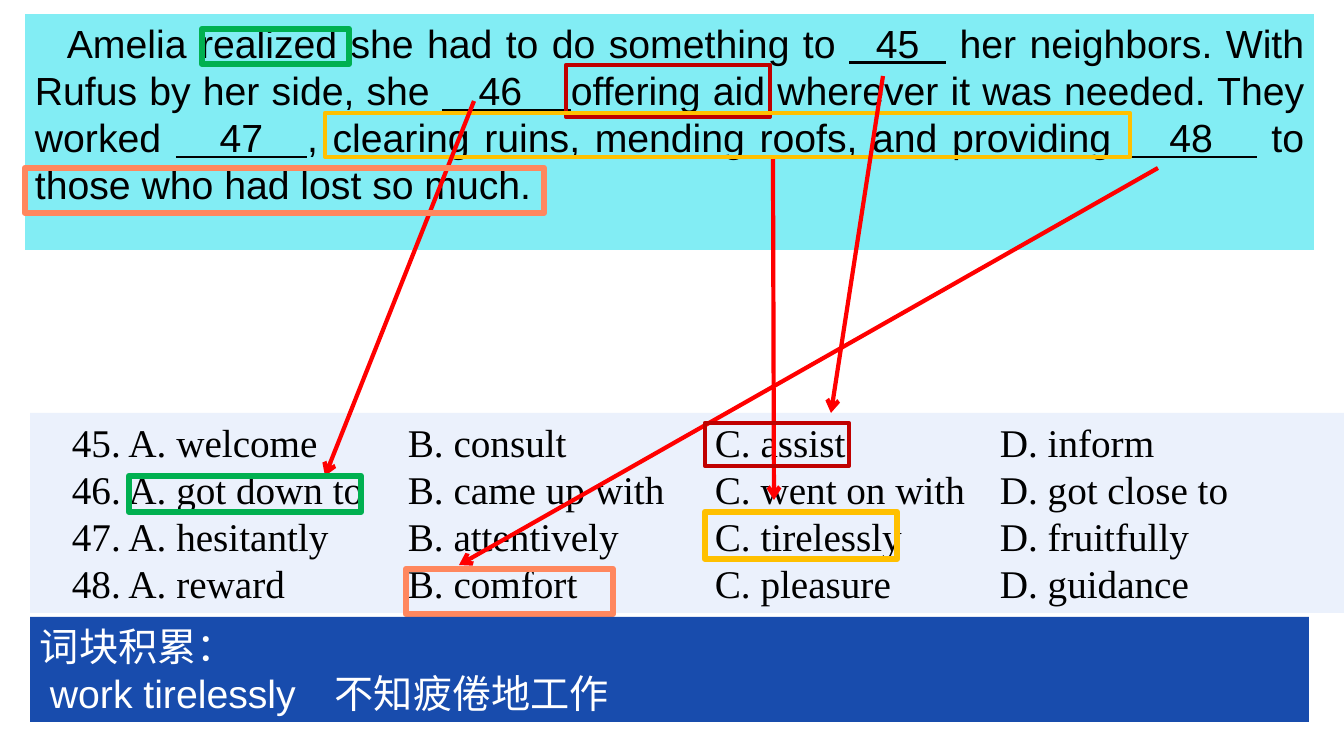
from dataclasses import dataclass

from lxml import etree
from pptx import Presentation
from pptx.dml.color import RGBColor
from pptx.enum.shapes import MSO_CONNECTOR, MSO_SHAPE
from pptx.enum.text import MSO_ANCHOR, PP_ALIGN
from pptx.oxml.ns import qn
from pptx.util import Emu, Pt

RECT = MSO_SHAPE.RECTANGLE
STRAIGHT = MSO_CONNECTOR.STRAIGHT
TOP = MSO_ANCHOR.TOP
LEFT = PP_ALIGN.LEFT
JUSTIFY = PP_ALIGN.JUSTIFY

SCALE = 12192000 / 1344
SIZE = Pt(28)
PITCH = Pt(33.7)
BLACK, WHITE = "000000", "FFFFFF"
RED, CRIMSON, GREEN = "FF0000", "C00000", "00B050"
GOLD, CORAL = "FFC000", "FF875E"
SANS, SERIF = "Arial", "Times New Roman"


@dataclass
class Line:
    runs: list[str]
    indent: int = 0


@dataclass
class Panel:
    box: tuple[int, int, int, int]
    fill: str | None
    ink: str
    font: str
    lines: list[Line]
    align: PP_ALIGN = LEFT


@dataclass
class Frame:
    box: tuple[int, int, int, int]
    color: str
    width: float


@dataclass
class Arrow:
    start: tuple[int, int]
    end: tuple[int, int]


def px(n: int) -> Emu:
    return Emu(round(n * SCALE))


def rgb(code: str) -> RGBColor:
    return RGBColor.from_string(code)


def draw_panel(shapes, panel: Panel) -> None:
    box = shapes.add_textbox(*map(px, panel.box))
    if panel.fill:
        box.fill.solid()
        box.fill.fore_color.rgb = rgb(panel.fill)
    frame = box.text_frame
    frame.word_wrap = True
    frame.vertical_anchor = TOP
    for i, line in enumerate(panel.lines):
        para = frame.add_paragraph() if i else frame.paragraphs[0]
        para.alignment = panel.align
        para.line_spacing = PITCH
        props = para._p.get_or_add_pPr()
        props.set("marL", "0")
        props.set("indent", str(px(line.indent)))
        para.font.name = panel.font
        para.font.size = SIZE
        para.font.color.rgb = rgb(panel.ink)
        for j, text in enumerate(line.runs):
            run = para.add_run()
            run.text = text
            if j % 2:
                run.font.underline = True


def draw_frame(shapes, frame: Frame) -> None:
    rect = shapes.add_shape(RECT, *map(px, frame.box))
    rect.shadow.inherit = False
    rect.fill.background()
    rect.line.color.rgb = rgb(frame.color)
    rect.line.width = Pt(frame.width)


def draw_arrow(shapes, arrow: Arrow) -> None:
    link = shapes.add_connector(STRAIGHT, *map(px, arrow.start + arrow.end))
    link.line.color.rgb = rgb(RED)
    link.line.width = Pt(3)
    etree.SubElement(link.line._get_or_add_ln(), qn("a:tailEnd"), type="arrow")
    etree.SubElement(link._element.spPr, qn("a:effectLst"))


PASSAGE = [
    "Amelia realized she had to do something to ", "  45  ",
    " her neighbors. With Rufus by her side, she ", "   46    ",
    "offering aid wherever it was needed. They worked ", "   47   ",
    ", clearing ruins, mending roofs, and providing ", "   48   ",
    " to those who had lost so much.",
]
FIRST = ["welcome", "got down to", "hesitantly", "reward"]
OTHERS = [
    ("B", 398, 300, ["consult", "came up with", "attentively", "comfort"]),
    ("C", 705, 280, ["assist", "went on with", "tirelessly", "pleasure"]),
    ("D", 990, 280, ["inform", "got close to", "fruitfully", "guidance"]),
]

ITEMS = [
    Panel((25, 14, 1289, 236), "82EDF4", BLACK, SANS, [Line(PASSAGE, 32)], JUSTIFY),
    Panel((30, 413, 1314, 200), "EBF1FC", BLACK, SERIF,
          [Line([f"{num}. A. {word}"], 32) for num, word in enumerate(FIRST, 45)]),
    *(Panel((left, 413, width, 200), None, BLACK, SERIF,
            [Line([f"{key}. {word}"]) for word in words])
      for key, left, width, words in OTHERS),
    Frame((566, 65, 204, 52), CRIMSON, 3),
    Frame((202, 29, 147, 35), GREEN, 4.5),
    Arrow((773, 157), (774, 500)),
    Frame((325, 113, 805, 44), GOLD, 3),
    Arrow((474, 101), (325, 476)),
    Frame((705, 512, 192, 47), GOLD, 4.5),
    Arrow((1158, 168), (459, 565)),
    Frame((129, 476, 232, 36), GREEN, 4.5),
    Frame((705, 423, 144, 43), CRIMSON, 3),
    Arrow((883, 76), (831, 413)),
    Frame((406, 569, 207, 45), CORAL, 4.5),
    Frame((25, 168, 519, 45), CORAL, 4.5),
    Panel((30, 617, 1279, 105), "184CAD", WHITE, SANS,
          [Line(["词块积累："]), Line(["work tirelessly　不知疲倦地工作"], 10)]),
]
DRAW = {Panel: draw_panel, Frame: draw_frame, Arrow: draw_arrow}


def main() -> None:
    deck = Presentation()
    deck.slide_width = px(1344)
    deck.slide_height = px(756)
    slide = deck.slides.add_slide(deck.slide_layouts[6])
    for item in ITEMS:
        DRAW[type(item)](slide.shapes, item)
    deck.save("out.pptx")


if __name__ == "__main__":
    main()
